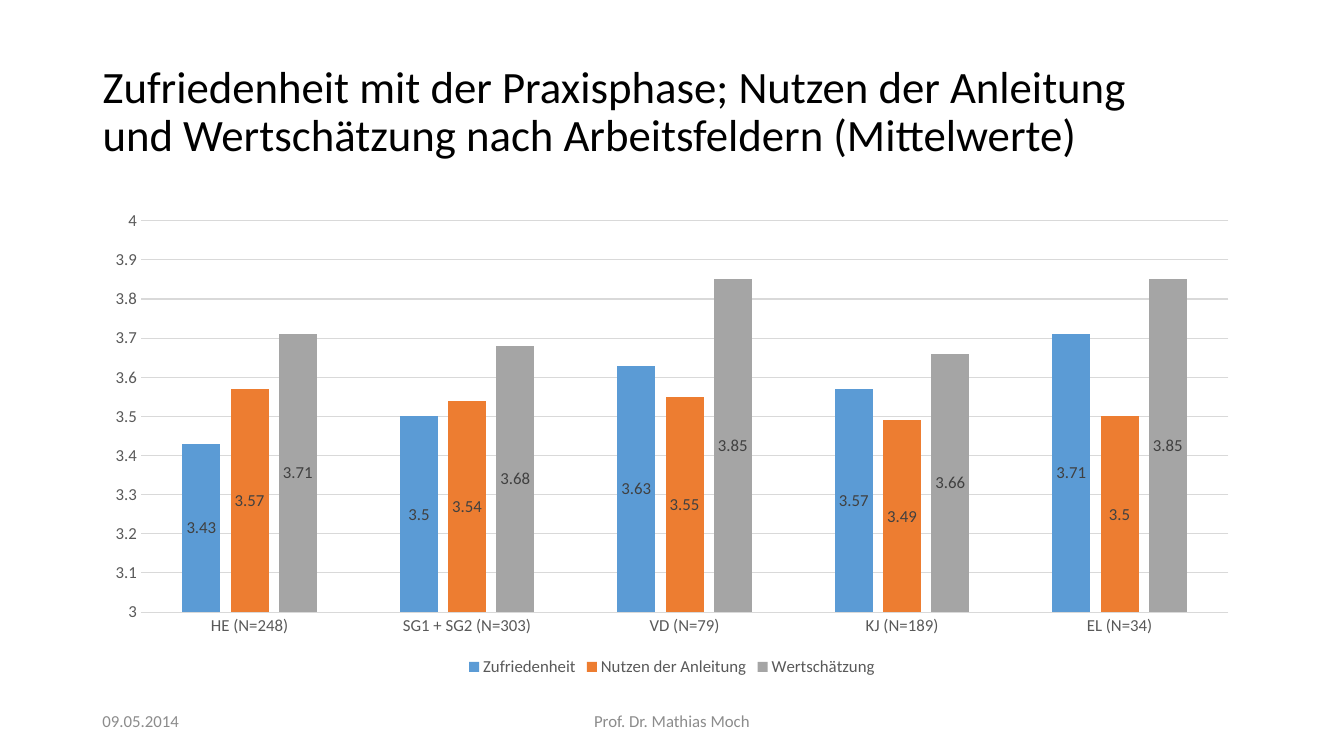
from pptx import Presentation
from pptx.chart.data import CategoryChartData
from pptx.dml.color import RGBColor
from pptx.enum.chart import XL_CHART_TYPE, XL_LABEL_POSITION, XL_LEGEND_POSITION, XL_TICK_MARK
from pptx.enum.text import MSO_ANCHOR, MSO_AUTO_SIZE, PP_ALIGN
from pptx.util import Cm, Pt

COLUMN = XL_CHART_TYPE.COLUMN_CLUSTERED
CENTER = XL_LABEL_POSITION.CENTER
BOTTOM = XL_LEGEND_POSITION.BOTTOM
NO_TICK = XL_TICK_MARK.NONE
MIDDLE = MSO_ANCHOR.MIDDLE
NO_FIT = MSO_AUTO_SIZE.NONE
LEFT, MID = PP_ALIGN.LEFT, PP_ALIGN.CENTER

BLACK = RGBColor(0x00, 0x00, 0x00)
DARK = RGBColor(0x40, 0x40, 0x40)
GREY = RGBColor(0x59, 0x59, 0x59)
PALE = RGBColor(0x8C, 0x8C, 0x8C)
GRID = RGBColor(0xD9, 0xD9, 0xD9)
BLUE = RGBColor(0x5B, 0x9B, 0xD5)
ORANGE = RGBColor(0xED, 0x7D, 0x31)
SILVER = RGBColor(0xA5, 0xA5, 0xA5)
FONT = "Calibri"
EDGE, WIDE = Cm(2.33), Cm(29.21)


def style(font, size, color):
    font.name = FONT
    font.size = Pt(size)
    font.color.rgb = color


def rule(line):
    line.color.rgb = GRID
    line.width = Pt(0.75)


deck = Presentation()
deck.slide_width, deck.slide_height = Cm(33.87), Cm(19.05)
slide = deck.slides.add_slide(deck.slide_layouts[5])

# Title
title = slide.shapes.title
title.left, title.top, title.width, title.height = EDGE, Cm(1.01), WIDE, Cm(3.68)
frame = title.text_frame
frame.auto_size = NO_FIT
frame.word_wrap = True
frame.vertical_anchor = MIDDLE
para = frame.paragraphs[0]
para.alignment = LEFT
para.line_spacing = 0.9
lines = ["Zufriedenheit mit der Praxisphase; Nutzen der Anleitung",
         "und Wertschätzung nach Arbeitsfeldern (Mittelwerte)"]
for i, line in enumerate(lines):
    if i:
        para.add_line_break()
    run = para.add_run()
    run.text = line
    style(run.font, 32, BLACK)

# Date and author
for text, left, width, align in [
    ("09.05.2014", EDGE, Cm(7.62), LEFT),
    ("Prof. Dr. Mathias Moch", Cm(11.22), Cm(11.43), MID),
]:
    box = slide.shapes.add_textbox(left, Cm(17.66), width, Cm(1.01))
    frame = box.text_frame
    frame.word_wrap = True
    frame.vertical_anchor = MIDDLE
    para = frame.paragraphs[0]
    para.alignment = align
    run = para.add_run()
    run.text = text
    style(run.font, 12, PALE)

# Mean values by field of work
series = [
    ("Zufriedenheit", BLUE, (3.43, 3.5, 3.63, 3.57, 3.71)),
    ("Nutzen der Anleitung", ORANGE, (3.57, 3.54, 3.55, 3.49, 3.5)),
    ("Wertschätzung", SILVER, (3.71, 3.68, 3.85, 3.66, 3.85)),
]
data = CategoryChartData()
data.categories = ["HE (N=248)", "SG1 + SG2 (N=303)", "VD (N=79)", "KJ (N=189)", "EL (N=34)"]
for name, color, means in series:
    data.add_series(name, means)
chart = slide.shapes.add_chart(COLUMN, EDGE, Cm(5.07), WIDE, Cm(12.09), data).chart
chart.has_title = False
style(chart.font, 10, BLACK)

# Columns and their labels
plot = chart.plots[0]
plot.vary_by_categories = False
plot.gap_width = 219
plot.overlap = -27
for bars, (name, color, means) in zip(plot.series, series):
    bars.format.fill.solid()
    bars.format.fill.fore_color.rgb = color
    labels = bars.data_labels
    labels.show_value = True
    labels.position = CENTER
    style(labels.font, 12, DARK)

# Axes
for axis in (chart.category_axis, chart.value_axis):
    axis.major_tick_mark = axis.minor_tick_mark = NO_TICK
    style(axis.tick_labels.font, 12, GREY)
rule(chart.category_axis.format.line)
scale = chart.value_axis
scale.minimum_scale, scale.maximum_scale, scale.major_unit = 3, 4, 0.1
scale.format.line.fill.background()
rule(scale.major_gridlines.format.line)

# Legend
chart.has_legend = True
chart.legend.position = BOTTOM
chart.legend.include_in_layout = False
style(chart.legend.font, 12, GREY)

deck.save("out.pptx")
